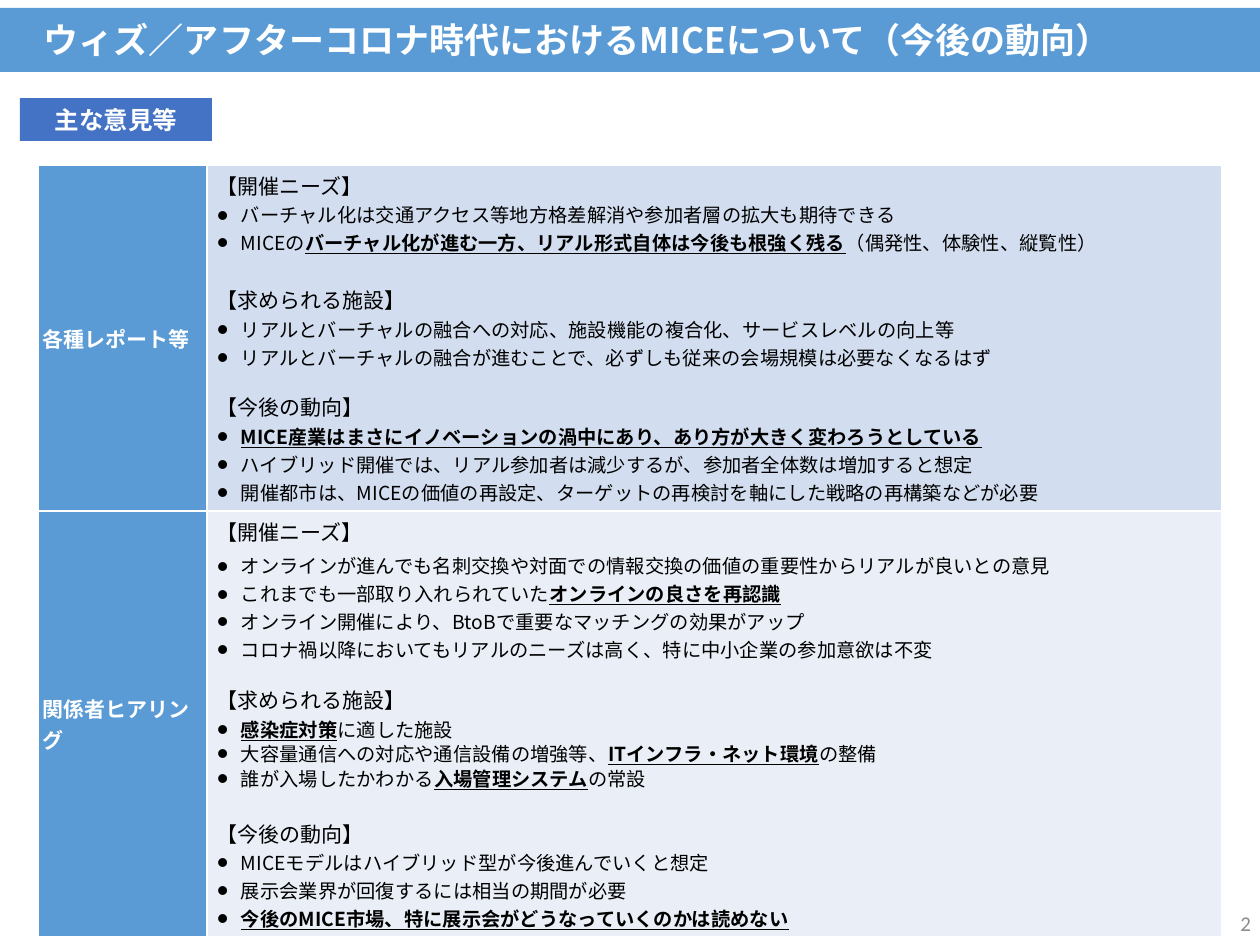
from dataclasses import dataclass

from lxml import etree
from pptx import Presentation
from pptx.dml.color import RGBColor
from pptx.enum.shapes import MSO_SHAPE
from pptx.enum.text import MSO_ANCHOR, PP_ALIGN
from pptx.oxml.ns import qn
from pptx.table import _Cell
from pptx.text.text import TextFrame, _Paragraph, _Run
from pptx.util import Emu, Pt

RECTANGLE = MSO_SHAPE.RECTANGLE
MIDDLE = MSO_ANCHOR.MIDDLE
LEFT, CENTER, RIGHT = PP_ALIGN.LEFT, PP_ALIGN.CENTER, PP_ALIGN.RIGHT

WHITE = RGBColor(0xFF, 0xFF, 0xFF)
BLACK = RGBColor(0x00, 0x00, 0x00)
GRAY = RGBColor(0x8C, 0x8C, 0x8C)
BLUE = RGBColor(0x5B, 0x9B, 0xD5)
DARK_BLUE = RGBColor(0x44, 0x72, 0xC4)
PALE_BLUE = RGBColor(0xD2, 0xDE, 0xEF)
PALEST_BLUE = RGBColor(0xEA, 0xEF, 0xF7)

JAPANESE_FONT = "Noto Sans CJK JP"
LATIN_FONT = "Calibri"
PX_PER_INCH = 126
BULLET_INDENT = 24
EMPHASIS = "*"


@dataclass(frozen=True)
class Line:
    """A bullet; text between asterisks is bold and underlined."""
    text: str
    after: int = 0
    spacing: int | None = None


@dataclass(frozen=True)
class Section:
    heading: str
    bullets: tuple[Line, ...]
    before: int = 0
    after: int = 0


@dataclass(frozen=True)
class OpinionRow:
    source: str
    height: int
    fill: RGBColor
    sections: tuple[Section, ...]


ROWS = (
    OpinionRow("各種レポート等", 321, PALE_BLUE, (
        Section("【開催ニーズ】", (
            Line("バーチャル化は交通アクセス等地方格差解消や参加者層の拡大も期待できる"),
            Line("MICEの*バーチャル化が進む一方、リアル形式自体は今後も根強く残る*（偶発性、体験性、縦覧性）"),
        )),
        Section("【求められる施設】", (
            Line("リアルとバーチャルの融合への対応、施設機能の複合化、サービスレベルの向上等"),
            Line("リアルとバーチャルの融合が進むことで、必ずしも従来の会場規模は必要なくなるはず"),
        ), before=16),
        Section("【今後の動向】", (
            Line("*MICE産業はまさにイノベーションの渦中にあり、あり方が大きく変わろうとしている*"),
            Line("ハイブリッド開催では、リアル参加者は減少するが、参加者全体数は増加すると想定"),
            Line("開催都市は、MICEの価値の再設定、ターゲットの再検討を軸にした戦略の再構築などが必要"),
        ), before=12),
    )),
    OpinionRow("関係者ヒアリング", 406, PALEST_BLUE, (
        Section("【開催ニーズ】", (
            Line("オンラインが進んでも名刺交換や対面での情報交換の価値の重要性からリアルが良いとの意見"),
            Line("これまでも一部取り入れられていた*オンラインの良さを再認識*"),
            Line("オンライン開催により、BtoBで重要なマッチングの効果がアップ"),
            Line("コロナ禍以降においてもリアルのニーズは高く、特に中小企業の参加意欲は不変"),
        ), after=3),
        Section("【求められる施設】", (
            Line("*感染症対策*に適した施設", after=3),
            Line("大容量通信への対応や通信設備の増強等、*ITインフラ・ネット環境*の整備", after=3, spacing=11),
            Line("誰が入場したかわかる*入場管理システム*の常設", after=3, spacing=11),
        ), before=12),
        Section("【今後の動向】", (
            Line("MICEモデルはハイブリッド型が今後進んでいくと想定"),
            Line("展示会業界が回復するには相当の期間が必要"),
            Line("*今後のMICE市場、特に展示会がどうなっていくのかは読めない*"),
        ), before=12),
    )),
)


def px(length: int) -> Emu:
    return Emu(round(length * 914400 / PX_PER_INCH))


def place(shape, left: int, top: int, width: int, height: int) -> None:
    shape.left, shape.top = px(left), px(top)
    shape.width, shape.height = px(width), px(height)


def fill_solid(target, color: RGBColor) -> None:
    target.fill.solid()
    target.fill.fore_color.rgb = color


def format_run(run: _Run, size: int, color: RGBColor, bold: bool = False,
               font_name: str = JAPANESE_FONT) -> None:
    font = run.font
    font.size, font.bold, font.name = Pt(size), bold, font_name
    font.color.rgb = color
    etree.SubElement(run._r.get_or_add_rPr(), qn("a:ea"), typeface=font_name)


def write_line(frame: TextFrame, text: str, size: int, color: RGBColor, align=LEFT,
               bold: bool = False, font_name: str = JAPANESE_FONT) -> None:
    frame.text = text
    frame.word_wrap = True
    frame.vertical_anchor = MIDDLE
    paragraph = frame.paragraphs[0]
    paragraph.alignment = align
    format_run(paragraph.runs[0], size, color, bold, font_name)


def add_bullet_mark(paragraph: _Paragraph) -> None:
    properties = paragraph._p.get_or_add_pPr()
    properties.set("marL", str(px(BULLET_INDENT)))
    properties.set("indent", str(-px(BULLET_INDENT)))
    etree.SubElement(properties, qn("a:buFont"), typeface=LATIN_FONT)
    etree.SubElement(properties, qn("a:buChar"), char="●")


def write_bullet(paragraph: _Paragraph, line: Line) -> None:
    paragraph.space_after = Pt(line.after)
    if line.spacing:
        paragraph.line_spacing = Pt(line.spacing)
    add_bullet_mark(paragraph)
    for index, part in enumerate(line.text.split(EMPHASIS)):
        if part:
            emphasized = index % 2 == 1
            run = paragraph.add_run()
            run.text = part
            run.font.underline = emphasized
            format_run(run, 11, BLACK, emphasized)


def write_sections(frame: TextFrame, sections: tuple[Section, ...]) -> None:
    for index, section in enumerate(sections):
        heading = frame.add_paragraph() if index else frame.paragraphs[0]
        heading.text = section.heading
        heading.space_before = Pt(section.before)
        heading.space_after = Pt(section.after)
        format_run(heading.runs[0], 12, BLACK)
        for line in section.bullets:
            write_bullet(frame.add_paragraph(), line)


def style_cell(cell: _Cell, color: RGBColor, left_margin: int) -> None:
    """Set margins, white borders and fill; borders must precede the fill in XML."""
    cell.vertical_anchor = MIDDLE
    cell.margin_left = px(left_margin)
    cell.margin_right = cell.margin_top = cell.margin_bottom = px(5)
    properties = cell._tc.get_or_add_tcPr()
    for side in ("lnL", "lnR", "lnT", "lnB"):
        border = etree.SubElement(properties, qn(f"a:{side}"), w=str(Pt(1)))
        solid = etree.SubElement(border, qn("a:solidFill"))
        etree.SubElement(solid, qn("a:srgbClr"), val=str(WHITE))
    fill_solid(cell, color)


def add_opinion_table(slide) -> None:
    height = sum(row.height for row in ROWS)
    table = slide.shapes.add_table(len(ROWS), 2, px(38), px(165), px(1184), px(height)).table
    table.first_row = table.horz_banding = False
    table.columns[0].width, table.columns[1].width = px(169), px(1015)
    for index, row in enumerate(ROWS):
        table.rows[index].height = px(row.height)
        source, opinions = table.cell(index, 0), table.cell(index, 1)
        write_line(source.text_frame, row.source, 12, WHITE, bold=True)
        style_cell(source, BLUE, 5)
        write_sections(opinions.text_frame, row.sections)
        style_cell(opinions, row.fill, 10)


def main() -> None:
    presentation = Presentation()
    presentation.slide_width, presentation.slide_height = px(1260), px(945)
    slide = presentation.slides.add_slide(presentation.slide_layouts[5])

    title = slide.shapes.title
    place(title, 0, 8, 1260, 64)
    fill_solid(title, BLUE)
    write_line(title.text_frame, "ウィズ／アフターコロナ時代におけるMICEについて（今後の動向）",
               20, WHITE, CENTER, bold=True)
    title.text_frame.margin_right = px(118)

    add_opinion_table(slide)

    badge = slide.shapes.add_shape(RECTANGLE, px(20), px(98), px(192), px(43))
    badge.shadow.inherit = False
    fill_solid(badge, DARK_BLUE)
    badge.line.fill.background()
    write_line(badge.text_frame, "主な意見等", 14, WHITE, CENTER, bold=True)

    page_number = slide.shapes.add_textbox(px(980), px(901), px(280), px(44))
    write_line(page_number.text_frame, "2", 12, GRAY, RIGHT, font_name=LATIN_FONT)
    page_number.text_frame.margin_right = px(9)

    presentation.save("out.pptx")


if __name__ == "__main__":
    main()
